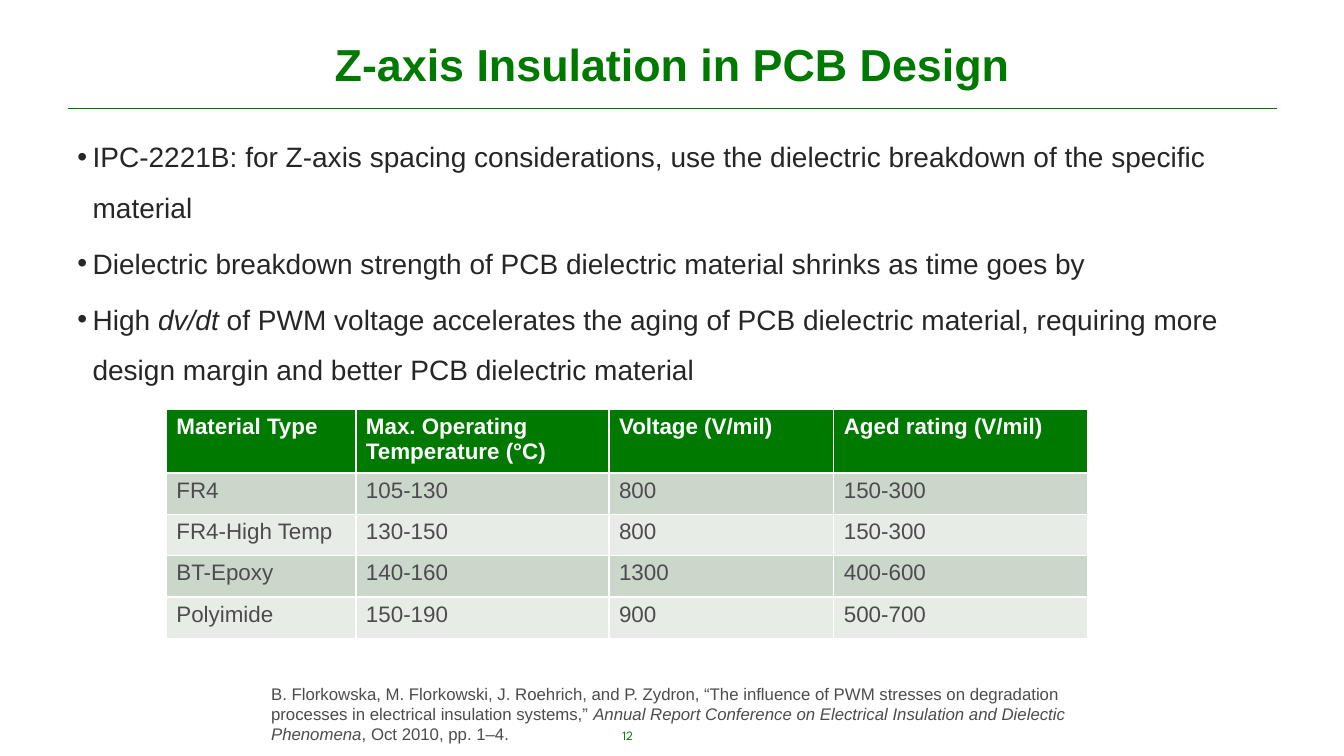
from typing import NamedTuple

from lxml import etree
from pptx import Presentation
from pptx.dml.color import RGBColor
from pptx.enum import shapes, text
from pptx.oxml import ns
from pptx.util import Inches, Pt

GREEN = RGBColor(0x00, 0x79, 0x00)
RULE_GREEN = RGBColor(0x00, 0x76, 0x00)
WHITE = RGBColor(0xFF, 0xFF, 0xFF)
INK = RGBColor(0x26, 0x26, 0x26)
GREY = RGBColor(0x4C, 0x4C, 0x4C)
BANDS = (RGBColor(0xCC, 0xD7, 0xCC), RGBColor(0xE7, 0xEC, 0xE7))

LEFT, WIDTH = 0.67, 12


class Span(NamedTuple):
    words: str
    italic: bool = False


class Material(NamedTuple):
    name: str
    temperature: str
    voltage: str
    aged_rating: str


HEADINGS = Material("Material Type", "Max. Operating Temperature (°C)",
                    "Voltage (V/mil)", "Aged rating (V/mil)")
MATERIALS = [
    Material("FR4", "105-130", "800", "150-300"),
    Material("FR4-High Temp", "130-150", "800", "150-300"),
    Material("BT-Epoxy", "140-160", "1300", "400-600"),
    Material("Polyimide", "150-190", "900", "500-700"),
]
COLUMN_WIDTHS = (1.88, 2.51, 2.23, 2.52)
ROW_HEIGHT = 0.41

POINTS = [
    [Span("IPC-2221B: for Z-axis spacing considerations, use the dielectric "
          "breakdown of the specific material")],
    [Span("Dielectric breakdown strength of PCB dielectric material shrinks as time goes by")],
    [Span("High "), Span("dv/dt", italic=True),
     Span(" of PWM voltage accelerates the aging of PCB dielectric material, "
          "requiring more design margin and better PCB dielectric material")],
]
CITATION = [
    Span("B. Florkowska, M. Florkowski, J. Roehrich, and P. Zydron, “The influence of PWM "
         "stresses on degradation processes in electrical insulation systems,” "),
    Span("Annual Report Conference on Electrical Insulation and Dielectic Phenomena", italic=True),
    Span(", Oct 2010, pp. 1–4."),
]


def set_font(paragraph, size: float, color: RGBColor, bold: bool = False,
             name: str = "Arial") -> None:
    font = paragraph.font
    font.name, font.size, font.bold = name, Pt(size), bold
    font.color.rgb = color


def add_spans(paragraph, spans: list[Span]) -> None:
    for span in spans:
        run = paragraph.add_run()
        run.text = span.words
        if span.italic:
            run.font.italic = True


def add_frame(slide, left: float, top: float, width: float, height: float):
    frame = slide.shapes.add_textbox(
        Inches(left), Inches(top), Inches(width), Inches(height)).text_frame
    frame.word_wrap = True
    return frame


def add_bullet(paragraph) -> None:
    properties = paragraph._p.get_or_add_pPr()
    properties.set("marL", str(Inches(0.15)))
    properties.set("indent", str(Inches(-0.19)))
    etree.SubElement(properties, ns.qn("a:buFont"), typeface="Arial")
    etree.SubElement(properties, ns.qn("a:buChar"), char="•")


def add_heading(slide) -> None:
    title = slide.shapes.title
    title.left, title.top = Inches(LEFT), Inches(0.17)
    title.width, title.height = Inches(WIDTH), Inches(0.92)
    frame = title.text_frame
    frame.text = "Z-axis Insulation in PCB Design"
    frame.vertical_anchor = text.MSO_ANCHOR.MIDDLE
    frame.paragraphs[0].alignment = text.PP_ALIGN.CENTER
    set_font(frame.paragraphs[0], 32, GREEN, bold=True)

    rule = slide.shapes.add_connector(
        shapes.MSO_CONNECTOR.STRAIGHT,
        Inches(LEFT), Inches(1.08), Inches(LEFT + WIDTH), Inches(1.08))
    rule.line.color.rgb = RULE_GREEN
    rule.line.width = Pt(0.75)
    etree.SubElement(rule._element.spPr, ns.qn("a:effectLst"))


def add_points(slide) -> None:
    frame = add_frame(slide, LEFT, 1.17, WIDTH, 5.58)
    for index, spans in enumerate(POINTS):
        paragraph = frame.add_paragraph() if index else frame.paragraphs[0]
        add_bullet(paragraph)
        paragraph.line_spacing = 1.5
        if index:
            paragraph.space_before = Pt(4)
        add_spans(paragraph, spans)
        set_font(paragraph, 20, INK)


def add_materials(slide) -> None:
    rows = [HEADINGS, *MATERIALS]
    table = slide.shapes.add_table(
        len(rows), len(COLUMN_WIDTHS), Inches(1.65), Inches(4.06),
        Inches(sum(COLUMN_WIDTHS)), Inches(ROW_HEIGHT * len(rows))).table
    for column, width in zip(table.columns, COLUMN_WIDTHS):
        column.width = Inches(width)
    for row_index, material in enumerate(rows):
        is_header = row_index == 0
        for column_index, value in enumerate(material):
            cell = table.cell(row_index, column_index)
            cell.text = value
            cell.fill.solid()
            cell.fill.fore_color.rgb = GREEN if is_header else BANDS[(row_index - 1) % 2]
            set_font(cell.text_frame.paragraphs[0], 16,
                     WHITE if is_header else GREY, bold=is_header)


def add_footer(slide) -> None:
    citation = add_frame(slide, 2.59, 6.73, 8.69, 0.71).paragraphs[0]
    citation.space_after = Pt(6)
    add_spans(citation, CITATION)
    set_font(citation, 12, GREY)

    page_number = add_frame(slide, 5.78, 7.17, 0.89, 0.33).paragraphs[0]
    page_number.text = "12"
    page_number.alignment = text.PP_ALIGN.CENTER
    set_font(page_number, 9, GREEN, name="League Spartan")


def main() -> None:
    deck = Presentation()
    deck.slide_width, deck.slide_height = Inches(13.33), Inches(7.5)
    slide = deck.slides.add_slide(deck.slide_layouts[5])
    add_heading(slide)
    add_points(slide)
    add_materials(slide)
    add_footer(slide)
    deck.save("out.pptx")


if __name__ == "__main__":
    main()
